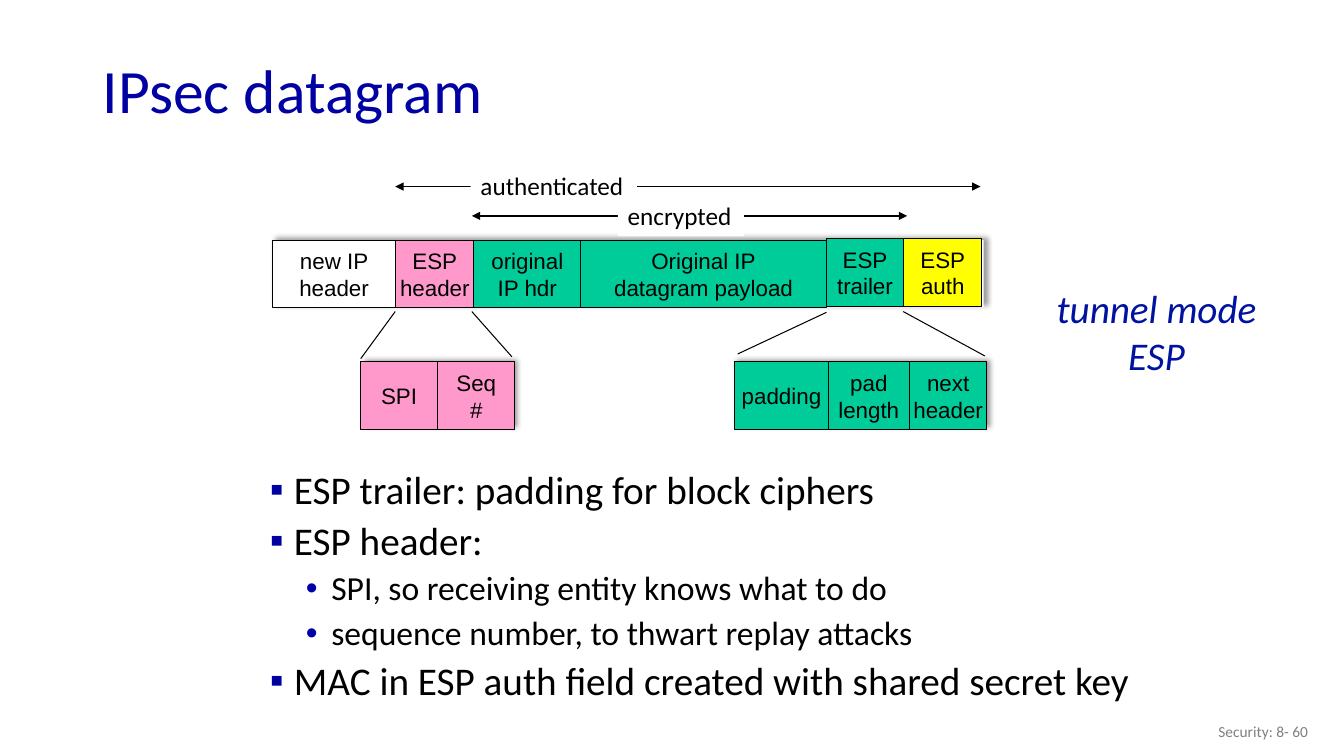
"""Builds the IPsec datagram slide: ESP packet layout with its fields explained."""
from itertools import pairwise

from lxml import etree
from pptx import Presentation
from pptx import util as u
from pptx.dml.color import RGBColor
from pptx.enum import shapes, text
from pptx.oxml.ns import qn

COLORS = {"title": "0000A3", "sub bullet": "0000A8", "mode": "0012A0", "footer": "808080",
          "ink": "000000", "plain": "FFFFFF", "header": "FF99CC", "sealed": "00CC99",
          "auth": "FFFF00"}

TITLE = "IPsec datagram"
FOOTER = "Security: 8- 60"
MODE = "tunnel mode\nESP"
FIELD_HEIGHT = 1.7

BACKDROPS = [(9.12, 9.14, 3.84), (18.49, 9.14, 6.38), (6.86, 6.05, 17.93)]

FIELD_ROWS = [
    (6.05, [6.86, 9.98, 11.94, 14.64, 20.82],
     [("new IP\vheader", "plain"), ("ESP\nheader", "header"),
      ("original\vIP hdr", "sealed"), ("Original IP\ndatagram payload", "sealed")]),
    (6.02, [20.82, 22.78, 24.74], [("ESP\ntrailer", "sealed"), ("ESP\nauth", "auth")]),
    (9.12, [18.52, 20.87, 22.92, 24.87],
     [("padding", "sealed"), ("pad\vlength", "sealed"), ("next\vheader", "sealed")]),
    (9.12, [9.09, 11.03, 12.98], [("SPI", "header"), ("Seq\n#", "header")]),
]

ZOOM_LINES = [(18.59, 8.92, 20.83, 7.87), (24.82, 8.97, 22.76, 7.85),
              (9.09, 9.04, 9.96, 7.85), (11.89, 7.85, 12.9, 8.99)]

SPANS = [("encrypted", 11.89, 22.86, 5.44, (15.57, 4.93, 3.18, 1.02)),
         ("authenticated", 9.96, 24.71, 4.7, (11.86, 4.17, 4.19, 1.02))]

POINTS = [(0, "ESP trailer: padding for block ciphers"),
          (0, "ESP header:"),
          (1, "SPI, so receiving entity knows what to do"),
          (1, "sequence number, to thwart replay attacks"),
          (0, "MAC in ESP auth field created with shared secret key")]
LEVELS = [dict(size=28, char="▪", color="title", margin=0.99, hang=0.61),
          dict(size=24, char="•", color="sub bullet", margin=1.93, hang=0.64)]


def rgb(name):
    return RGBColor.from_string(COLORS[name])


def cm(*lengths):
    return [u.Cm(length) for length in lengths]


def write(holder, words, size, font="Calibri", color="ink", align="LEFT", anchor="TOP",
          italic=False, wrap=True, grow=False, leading=None):
    frame = holder.text_frame
    frame.text = words
    frame.word_wrap = wrap
    frame.vertical_anchor = text.MSO_ANCHOR[anchor]
    fit = text.MSO_AUTO_SIZE
    frame.auto_size = fit.SHAPE_TO_FIT_TEXT if grow else fit.NONE
    for paragraph in frame.paragraphs:
        paragraph.alignment = text.PP_ALIGN[align]
        if leading:
            paragraph.line_spacing = leading
        for run in paragraph.runs:
            run.font.size = u.Pt(size)
            run.font.name = font
            run.font.italic = italic
            run.font.color.rgb = rgb(color)
    return frame


def add_rect(slide, place, fill, outlined=False):
    rect = slide.shapes.add_shape(shapes.MSO_SHAPE.RECTANGLE, *cm(*place))
    rect.shadow.inherit = False
    rect.fill.solid()
    rect.fill.fore_color.rgb = rgb(fill)
    if outlined:
        rect.line.color.rgb = rgb("ink")
        rect.line.width = u.Pt(0.75)
    else:
        rect.line.fill.background()
    return rect


def cast_shadow(rect):
    effects = rect._element.spPr.find(qn("a:effectLst"))
    shadow = etree.SubElement(effects, qn("a:outerShdw"), blurRad=str(u.Pt(4)),
                              dist=str(u.Pt(3)), dir=str(315 * 60000), rotWithShape="0")
    tint = etree.SubElement(shadow, qn("a:srgbClr"), val=COLORS["ink"])
    etree.SubElement(tint, qn("a:alpha"), val="40000")


def add_line(slide, ends, width, arrows=False):
    line = slide.shapes.add_connector(shapes.MSO_CONNECTOR.STRAIGHT, *cm(*ends))
    line.line.color.rgb = rgb("ink")
    line.line.width = u.Pt(width)
    if arrows:
        for end in ("a:headEnd", "a:tailEnd"):
            etree.SubElement(line.line._get_or_add_ln(), qn(end), type="triangle")
    etree.SubElement(line._element.spPr, qn("a:effectLst"))


def add_bullet(paragraph, level):
    style = LEVELS[level]
    paragraph.level = level
    paragraph.space_before = u.Pt(6)
    paragraph.runs[0].font.size = u.Pt(style["size"])
    props = paragraph._p.get_or_add_pPr()
    props.set("marL", str(u.Cm(style["margin"])))
    props.set("indent", str(-u.Cm(style["hang"])))
    tint = etree.SubElement(props, qn("a:buClr"))
    etree.SubElement(tint, qn("a:srgbClr"), val=COLORS[style["color"]])
    etree.SubElement(props, qn("a:buFont"), typeface="Arial")
    etree.SubElement(props, qn("a:buChar"), char=style["char"])


def main():
    deck = Presentation()
    deck.slide_width, deck.slide_height = cm(33.87, 19.05)
    slide = deck.slides.add_slide(deck.slide_layouts[5])

    for left, top, width in BACKDROPS:
        cast_shadow(add_rect(slide, (left, top, width, FIELD_HEIGHT), "plain"))

    title = slide.shapes.title
    title.left, title.top, title.width, title.height = cm(2.34, 1.12, 29.21, 2.49)
    write(title, TITLE, 44, color="title", anchor="MIDDLE", leading=0.9)

    footer = slide.shapes.add_textbox(*cm(25.6, 17.91, 7.62, 1.02))
    write(footer, FOOTER, 11, color="footer", align="RIGHT", anchor="MIDDLE")

    for top, edges, fields in FIELD_ROWS:
        for (left, right), (label, fill) in zip(pairwise(edges), fields):
            field = add_rect(slide, (left, top, right - left, FIELD_HEIGHT), fill, outlined=True)
            write(field, label, 16, font="Arial", align="CENTER", anchor="MIDDLE", wrap=False)

    for ends in ZOOM_LINES:
        add_line(slide, ends, 0.75)

    for label, start, end, height, place in SPANS:
        add_line(slide, (start, height, end, height), 1, arrows=True)
        write(add_rect(slide, place, "plain"), label, 18, wrap=False, grow=True)

    points = slide.shapes.add_textbox(*cm(6.17, 11.73, 29.11, 6.58))
    frame = write(points, "\n".join(words for _, words in POINTS), 28, leading=0.9)
    for paragraph, (level, _) in zip(frame.paragraphs, POINTS):
        add_bullet(paragraph, level)

    mode = slide.shapes.add_textbox(*cm(26.34, 7.04, 5.61, 2.64))
    write(mode, MODE, 28, color="mode", align="CENTER", italic=True, wrap=False, grow=True)

    deck.save("out.pptx")


if __name__ == "__main__":
    main()
